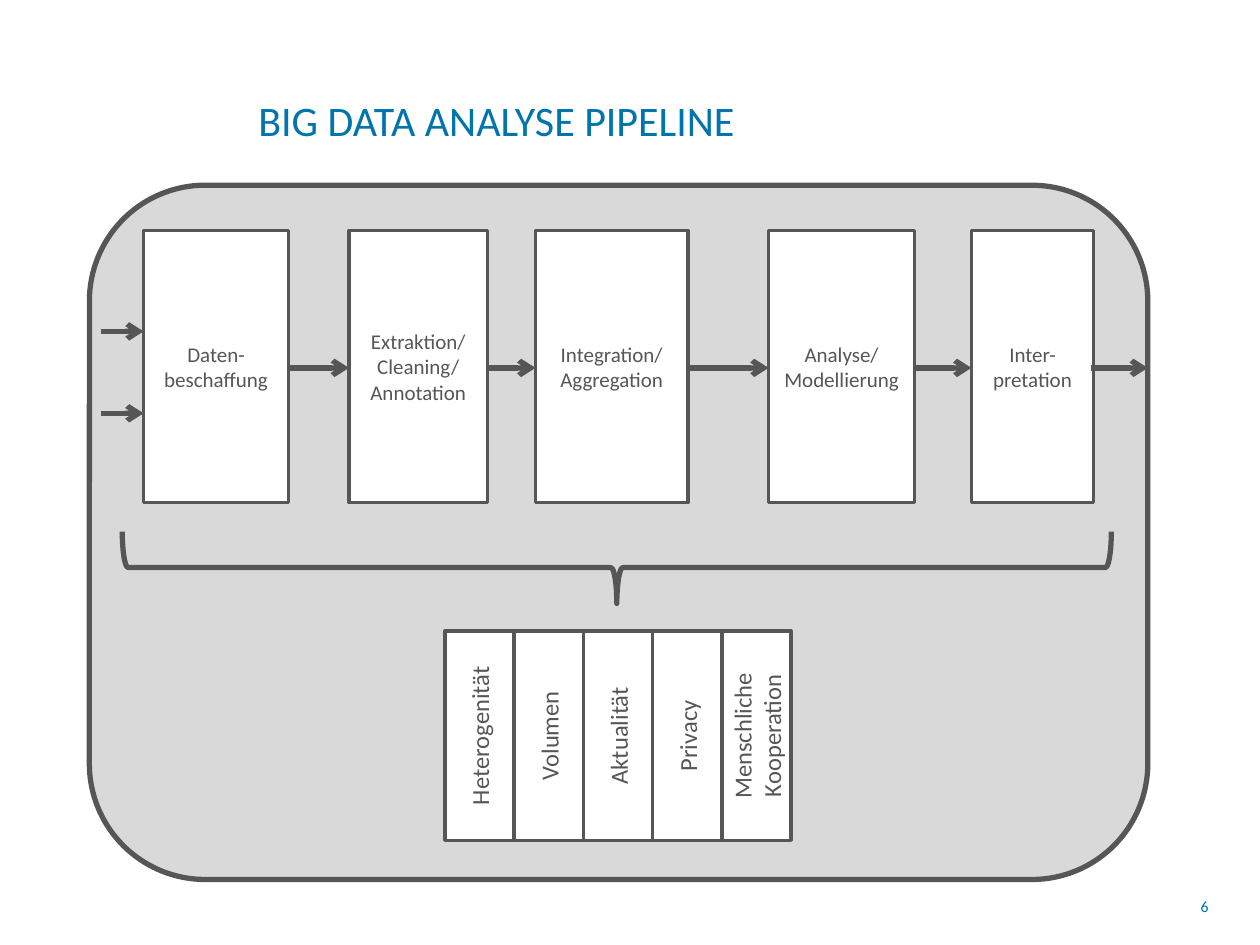
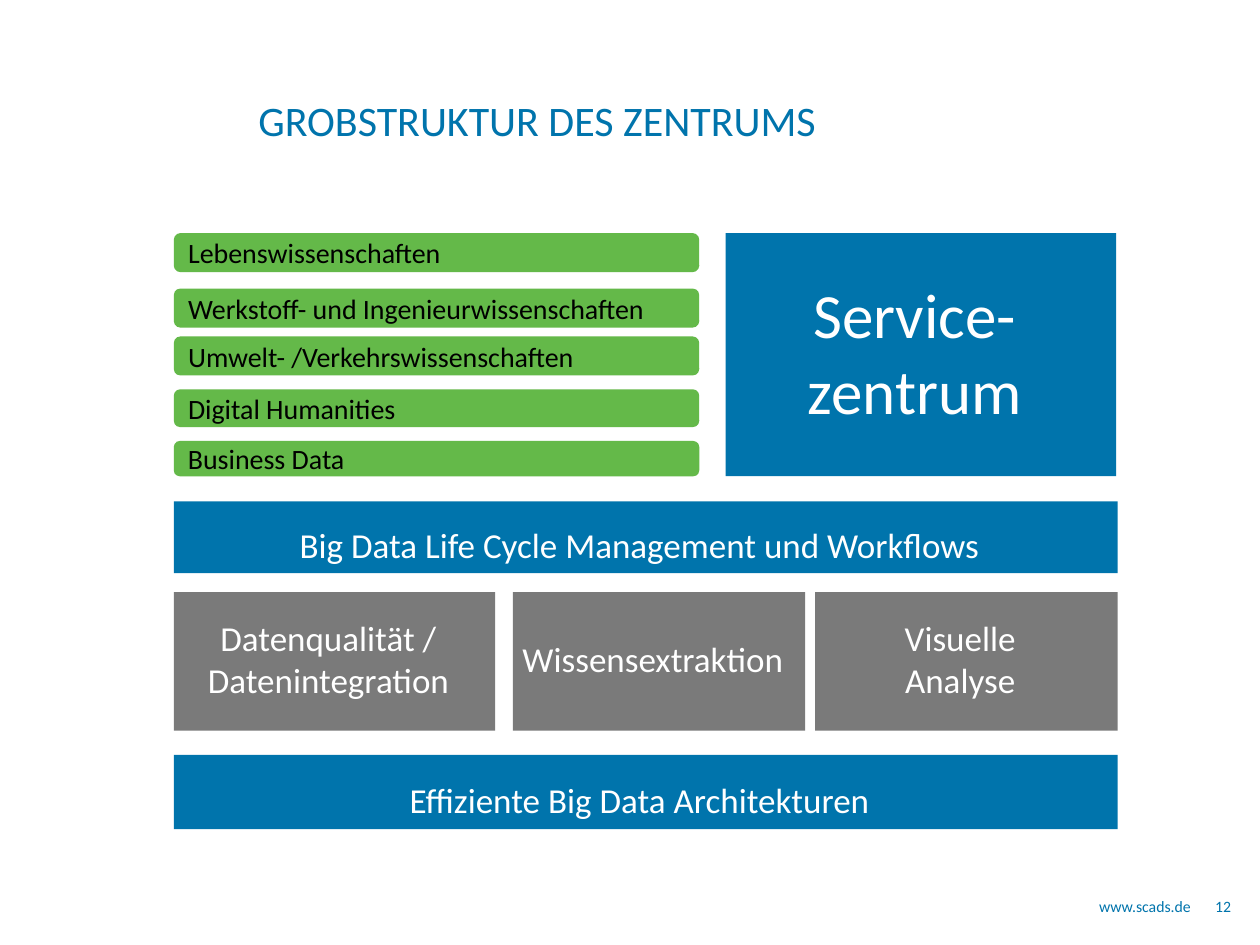
from pptx import Presentation
from pptx.dml.color import RGBColor
from pptx.enum.shapes import MSO_CONNECTOR, MSO_SHAPE as SHAPE
from pptx.enum.text import MSO_ANCHOR as ANCHOR, PP_ALIGN as ALIGN
from pptx.oxml.ns import qn
from pptx.util import Inches, Pt
from lxml.etree import SubElement

COLORS = {
    "blue": "0074AC", "dark": "565656", "panel": "D9D9D9",
    "gray": "7A7A7A", "green": "4DAF2E", "white": "FFFFFF", "black": "000000",
}
FONT = "Calibri"
INSETS = (0.1, 0.05, 0.1, 0.05)
BLOCK_INSETS = (0, 0, 0.1, 0.05)


def rgb(name):
    return RGBColor.from_string(COLORS[name])


def put_text(sp, text, size=12, color="dark", align=ALIGN.CENTER,
             anchor=ANCHOR.MIDDLE, insets=INSETS, spacing=None, vert=None):
    """Fill a shape: a newline starts a paragraph, \\v breaks a line."""
    tf = sp.text_frame
    tf.word_wrap = True
    tf.vertical_anchor = anchor
    tf.margin_left, tf.margin_top, tf.margin_right, tf.margin_bottom = map(Inches, insets)
    if vert:
        sp._element.txBody.find(qn("a:bodyPr")).set("vert", vert)
    tf.text = text
    for p in tf.paragraphs:
        p.alignment = align
        if spacing:
            p.line_spacing = spacing
        for r in p.runs:
            r.font.name, r.font.size = FONT, Pt(size)
            r.font.color.rgb = rgb(color)


class Deck:
    def __init__(self):
        self.prs = Presentation()
        self.prs.slide_width, self.prs.slide_height = Inches(10), Inches(7.5)
        self.s = None

    def slide(self, title, number, number_align, footer=None):
        self.s = self.prs.slides.add_slide(self.prs.slide_layouts[6])
        self.text(2.05, 0.39, 6.82, 0.76, title, size=24, anchor=ANCHOR.BOTTOM)
        self.text(9.53, 7.12, 0.24, 0.15, number, align=number_align)
        if footer:
            self.text(5, 7.12, 4.45, 0.15, footer, align=ALIGN.RIGHT)

    def text(self, x, y, w, h, text, size=9, align=ALIGN.LEFT, anchor=ANCHOR.TOP):
        sp = self.s.shapes.add_textbox(*map(Inches, (x, y, w, h)))
        put_text(sp, text, size, "blue", align, anchor, insets=(0, 0, 0, 0))

    def shape(self, kind, x, y, w, h, fill=None, line=None, alpha=None, text=None, **fmt):
        sp = self.s.shapes.add_shape(kind, *map(Inches, (x, y, w, h)))
        sp.shadow.inherit = False
        if fill:
            sp.fill.solid()
            sp.fill.fore_color.rgb = rgb(fill)
        else:
            sp.fill.background()
        if alpha:
            clr = sp._element.spPr.find(qn("a:solidFill"))[0]
            SubElement(clr, qn("a:alpha")).set("val", str(alpha * 1000))
        if line:
            sp.line.color.rgb, sp.line.width = rgb("dark"), Pt(line)
        else:
            sp.line.fill.background()
        if text:
            put_text(sp, text, **fmt)
        return sp

    def box(self, x, y, w, h, text, **fmt):
        self.shape(SHAPE.RECTANGLE, x, y, w, h, "white", 2, text=text, **fmt)

    def block(self, x, y, w, h, text, fill="blue", size=20, **fmt):
        self.shape(SHAPE.RECTANGLE, x, y, w, h, fill, text=text, size=size,
                   color="white", insets=BLOCK_INSETS, **fmt)

    def arrow(self, x1, x2, y):
        cn = self.s.shapes.add_connector(
            MSO_CONNECTOR.STRAIGHT, *map(Inches, (x1, y, x2, y)))
        cn.line.color.rgb, cn.line.width = rgb("dark"), Pt(3)
        SubElement(cn.line._get_or_add_ln(), qn("a:tailEnd")).set("type", "arrow")
        SubElement(cn._element.spPr, qn("a:effectLst"))


def pipeline(d):
    d.slide("BIG DATA ANALYSE PIPELINE", "6", ALIGN.LEFT)
    d.shape(SHAPE.ROUNDED_RECTANGLE, 0.71, 1.47, 8.4, 5.51, "panel", 3)

    # Stages, each linked to the next
    stages = [
        (1.14, 1.15, "Daten-beschaffung"),
        (2.77, 1.1, "Extraktion/\nCleaning/\nAnnotation"),
        (4.25, 1.21, "Integration/\nAggregation"),
        (6.1, 1.16, "Analyse/\nModellierung"),
        (7.71, 0.97, "Inter-pretation"),
    ]
    for x, w, name in stages:
        d.box(x, 1.83, w, 2.16, name)
    for (x, w, _), (next_x, _, _) in zip(stages, stages[1:]):
        d.arrow(x + w, next_x, 2.92)

    # Inputs and output
    for y in (2.63, 3.28):
        d.arrow(0.8, 1.14, y)
    d.arrow(8.66, 9.11, 2.92)

    # Challenges common to all stages
    brace = d.shape(SHAPE.RIGHT_BRACE, 4.61, 0.58, 0.57, 7.85, line=3)
    brace.rotation = 90
    challenges = ["Heterogenität", "Volumen", "Aktualität", "Privacy",
                  "Menschliche\nKooperation"]
    for i, name in enumerate(challenges):
        d.box(3.53 + i * 0.55, 5.01, 0.55, 1.66, name, size=14, vert="vert270")


def centre_structure(d):
    d.slide("GROBSTRUKTUR DES ZENTRUMS", "12", ALIGN.RIGHT, "www.scads.de")
    left, width = 1.38, 7.49

    # Full-width layers
    d.block(left, 3.98, width, 0.57, "Big Data Life Cycle Management und Workflows", spacing=1.5)
    d.block(left, 5.99, width, 0.59, "Effiziente Big Data Architekturen", spacing=1.5)

    # Research topics
    for x, w, name in [(left, 2.55, "Datenqualität /\nDatenintegration"),
                       (4.07, 2.32, "Wissensextraktion"),
                       (6.47, 2.4, "Visuelle\vAnalyse")]:
        d.block(x, 4.7, w, 1.1, name, fill="gray")

    # Application fields
    for y, h, name in [(1.85, 0.31, "Lebenswissenschaften"),
                       (2.29, 0.31, "Werkstoff- und Ingenieurwissenschaften"),
                       (2.67, 0.31, "Umwelt- /Verkehrswissenschaften"),
                       (3.09, 0.3, "Digital Humanities"),
                       (3.5, 0.28, "Business Data")]:
        d.shape(SHAPE.ROUNDED_RECTANGLE, left, y, 4.17, h, "green", alpha=87,
                text=name, size=16, color="black", align=ALIGN.LEFT)

    d.block(5.76, 1.85, 3.1, 1.93, "Service-\vzentrum", size=36)


def main():
    d = Deck()
    pipeline(d)
    centre_structure(d)
    d.prs.save("out.pptx")


if __name__ == "__main__":
    main()
